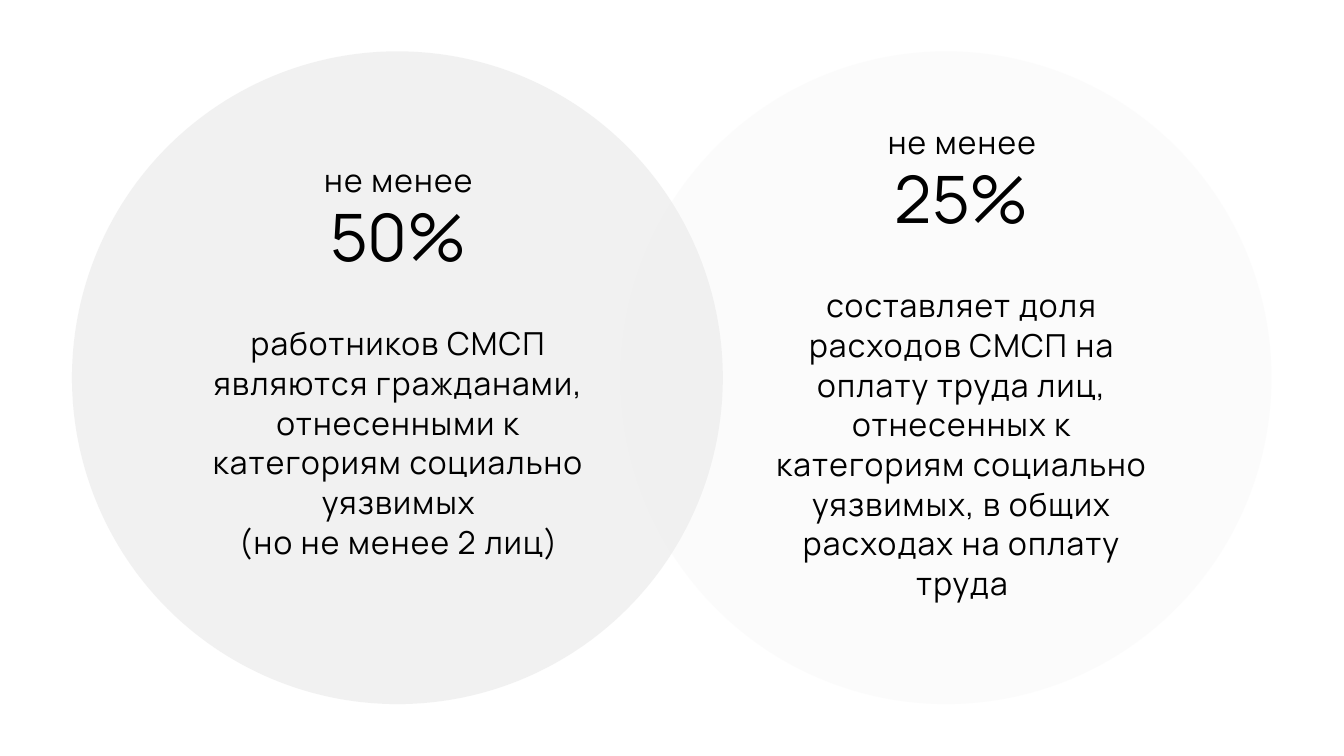
from lxml import etree
from pptx import Presentation
from pptx.dml.color import RGBColor
from pptx.enum.shapes import MSO_SHAPE
from pptx.enum.text import MSO_AUTO_SIZE, PP_ALIGN
from pptx.oxml.ns import qn
from pptx.util import Cm, Pt

OVAL = MSO_SHAPE.OVAL
CENTER = PP_ALIGN.CENTER
NO_FIT = MSO_AUTO_SIZE.NONE

FONT = "Manrope"
COLORS = {"circle": "EFEFEF", "text": "000000"}

CIRCLE_TOP, CIRCLE_WIDTH, CIRCLE_HEIGHT = 1.07, 13.56, 13.6
TEXT_WIDTH = 8.38
NUMBER_OFFSET, BODY_OFFSET = 0.85, 3.41

# circle left, circle opacity in percent, text left, text top, number, body paragraphs
CONDITIONS = [
    (1.5, 85, 4.11, 3.31, "50%",
     ["работников СМСП являются гражданами, отнесенными к категориям "
      "социально уязвимых",
      "(но не менее 2 лиц)"]),
    (12.93, 20, 15.85, 2.52, "25%",
     ["составляет доля расходов СМСП на оплату труда лиц, отнесенных к "
      "категориям социально уязвимых, в общих расходах на оплату труда"]),
]


def add_circle(slide, left, opacity):
    sp = slide.shapes.add_shape(OVAL, Cm(left), Cm(CIRCLE_TOP),
                                Cm(CIRCLE_WIDTH), Cm(CIRCLE_HEIGHT))
    sp.shadow.inherit = False
    sp.line.fill.background()
    sp.fill.solid()
    sp.fill.fore_color.rgb = RGBColor.from_string(COLORS["circle"])
    color = sp.fill._xPr.find(qn("a:solidFill"))[0]
    etree.SubElement(color, qn("a:alpha")).set("val", str(opacity * 1000))


def add_text(slide, left, top, height, paragraphs, size=18.7, leading=23.4, spacing=70):
    """Add a centred text box; spacing is in hundredths of a point."""
    box = slide.shapes.add_textbox(Cm(left), Cm(top), Cm(TEXT_WIDTH), Cm(height))
    tf = box.text_frame
    tf.word_wrap = True
    tf.auto_size = NO_FIT
    tf.margin_left = tf.margin_top = tf.margin_right = tf.margin_bottom = 0
    tf.text = "\n".join(paragraphs)
    for p in tf.paragraphs:
        p.alignment = CENTER
        p.line_spacing = Pt(leading)
        for r in p.runs:
            r.font.name = FONT
            r.font.size = Pt(size)
            r.font.color.rgb = RGBColor.from_string(COLORS["text"])
            r.font._element.set("spc", str(spacing))


def add_condition_text(slide, left, top, number, body):
    add_text(slide, left, top + NUMBER_OFFSET, 1.57, [number],
             size=38.6, leading=44.4, spacing=0)
    add_text(slide, left, top + BODY_OFFSET, 4.88 if len(body) > 1 else 6.5, body)
    add_text(slide, left, top, 0.76, ["не менее"])


def main():
    prs = Presentation()
    prs.slide_width, prs.slide_height = Cm(28), Cm(15.75)
    slide = prs.slides.add_slide(prs.slide_layouts[6])
    for circle_left, opacity, *_ in CONDITIONS:
        add_circle(slide, circle_left, opacity)
    for _, _, left, top, number, body in CONDITIONS:
        add_condition_text(slide, left, top, number, body)
    prs.save("out.pptx")


if __name__ == "__main__":
    main()
